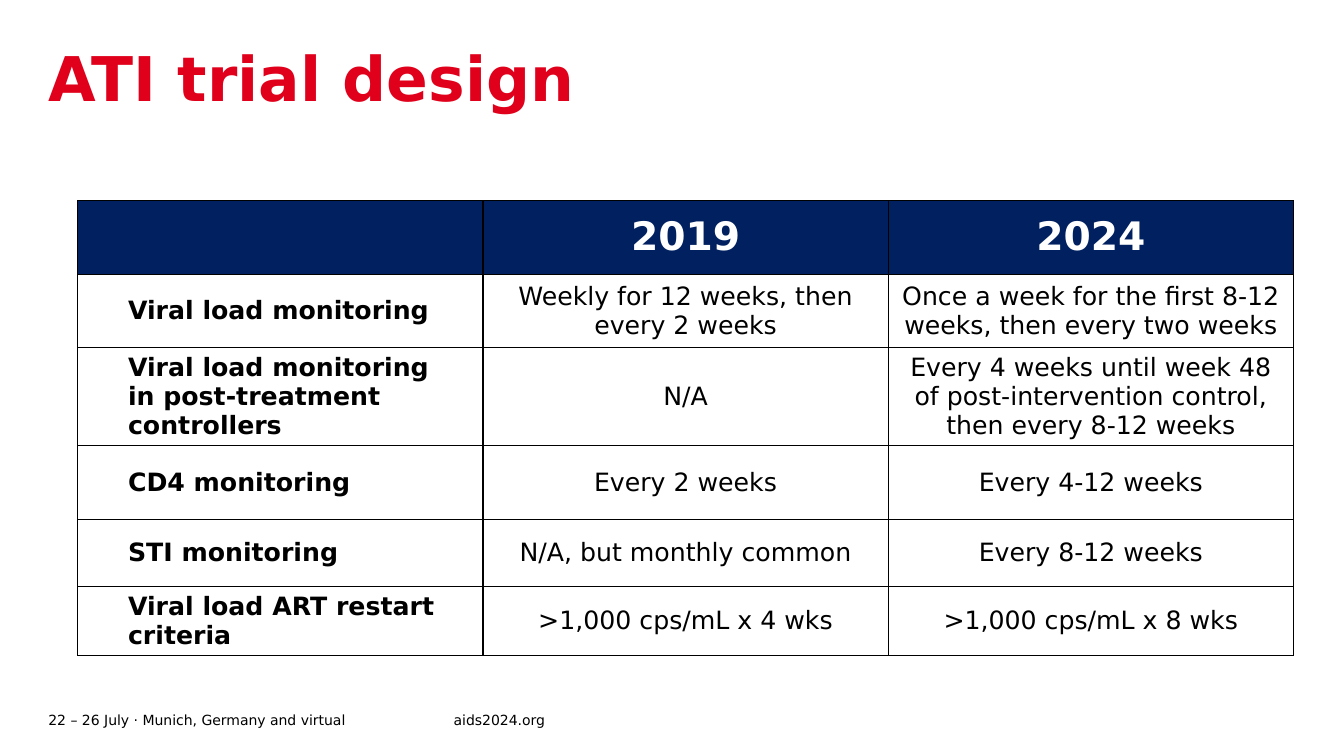
"""Build the ATI trial design slide: title, comparison table and footer."""
from lxml import etree
from pptx import Presentation
from pptx import util as u
from pptx.dml.color import RGBColor
from pptx.enum import text as t
from pptx.oxml import ns

TITLE = "ATI trial design"
ROWS = [
    ("", "2019", "2024"),
    ("Viral load monitoring", "Weekly for 12 weeks, then every 2 weeks",
     "Once a week for the first 8-12 weeks, then every two weeks"),
    ("Viral load monitoring\nin post-treatment controllers", "N/A",
     "Every 4 weeks until week 48 of post-intervention control, then every 8-12 weeks"),
    ("CD4 monitoring", "Every 2 weeks", "Every 4-12 weeks"),
    ("STI monitoring", "N/A, but monthly common", "Every 8-12 weeks"),
    ("Viral load ART restart criteria", ">1,000 cps/mL x 4 wks", ">1,000 cps/mL x 8 wks"),
]
FOOT = [
    ("22 – 26 July · Munich, Germany and virtual", 0.48, 4.02),
    ("aids2024.org", 4.5, 1.93),
]
HEIGHTS = [0.73, 0.73, 0.97, 0.73, 0.67, 0.68]
WIDTH = 4.02
FONT = "DejaVu Sans"
COLORS = {"red": "E0001B", "navy": "002060", "white": "FFFFFF", "black": "000000"}
LEFT, MID = t.PP_ALIGN.LEFT, t.PP_ALIGN.CENTER
STYLES = {
    "title": ({"size": u.Pt(44), "bold": True}, "red", LEFT),
    "head": ({"size": u.Pt(28), "bold": True}, "white", MID),
    "label": ({"size": u.Pt(18), "bold": True}, "black", LEFT),
    "value": ({"size": u.Pt(18), "bold": False}, "black", MID),
    "foot": ({"size": u.Pt(10), "bold": False}, "black", LEFT),
}


def color(name):
    return RGBColor.from_string(COLORS[name])


def write(frame, words, style):
    form, tone, align = STYLES[style]
    frame.text = words
    frame.word_wrap = True
    for para in frame.paragraphs:
        para.alignment = align
        for key, value in {"name": FONT, **form}.items():
            setattr(para.font, key, value)
        para.font.color.rgb = color(tone)


def inset(item, left, top, right, bottom):
    sides = {"left": left, "top": top, "right": right, "bottom": bottom}
    for side, size in sides.items():
        setattr(item, "margin_" + side, u.Inches(size))


def border(cell):
    props = cell._tc.get_or_add_tcPr()
    for side in "LRTB":
        line = etree.SubElement(props, ns.qn("a:ln" + side), w=str(u.Pt(1)))
        fill = etree.SubElement(line, ns.qn("a:solidFill"))
        etree.SubElement(fill, ns.qn("a:srgbClr"), val=COLORS["black"])


def add_title(slide):
    title = slide.shapes.title
    spot = {"left": 0.48, "top": 0.48, "width": 9.72, "height": 1.34}
    for key, value in spot.items():
        setattr(title, key, u.Inches(value))
    frame = title.text_frame
    write(frame, TITLE, "title")
    inset(frame, 0, 0, 0, 0)
    frame.vertical_anchor = t.MSO_ANCHOR.TOP
    frame.auto_size = t.MSO_AUTO_SIZE.NONE
    frame.paragraphs[0].line_spacing = 0.9


def add_grid(slide):
    cols = len(ROWS[0])
    grid = slide.shapes.add_table(
        len(ROWS), cols, u.Inches(0.77), u.Inches(1.99),
        u.Inches(WIDTH * cols), u.Inches(sum(HEIGHTS))).table
    grid.first_row = grid.horz_banding = False
    for col in grid.columns:
        col.width = u.Inches(WIDTH)
    for r, (row, high) in enumerate(zip(ROWS, HEIGHTS)):
        grid.rows[r].height = u.Inches(high)
        for c, words in enumerate(row):
            cell = grid.cell(r, c)
            style = "head" if r == 0 else "value" if c else "label"
            write(cell.text_frame, words, style)
            inset(cell, 0.5 if style == "label" else 0.1, 0.05, 0.1, 0.05)
            cell.vertical_anchor = t.MSO_ANCHOR.MIDDLE
            border(cell)
            if r:
                cell.fill.background()
            else:
                cell.fill.solid()
                cell.fill.fore_color.rgb = color("navy")


def add_foot(slide):
    for words, left, width in FOOT:
        frame = slide.shapes.add_textbox(
            u.Inches(left), u.Inches(7.02), u.Inches(width), u.Inches(0.24)).text_frame
        write(frame, words, "foot")
        inset(frame, 0, 0, 0, 0)
        frame.vertical_anchor = t.MSO_ANCHOR.MIDDLE


def main():
    deck = Presentation()
    deck.slide_width, deck.slide_height = u.Inches(13.33), u.Inches(7.5)
    slide = deck.slides.add_slide(deck.slide_layouts[5])
    add_title(slide)
    add_grid(slide)
    add_foot(slide)
    deck.save("out.pptx")


if __name__ == "__main__":
    main()
